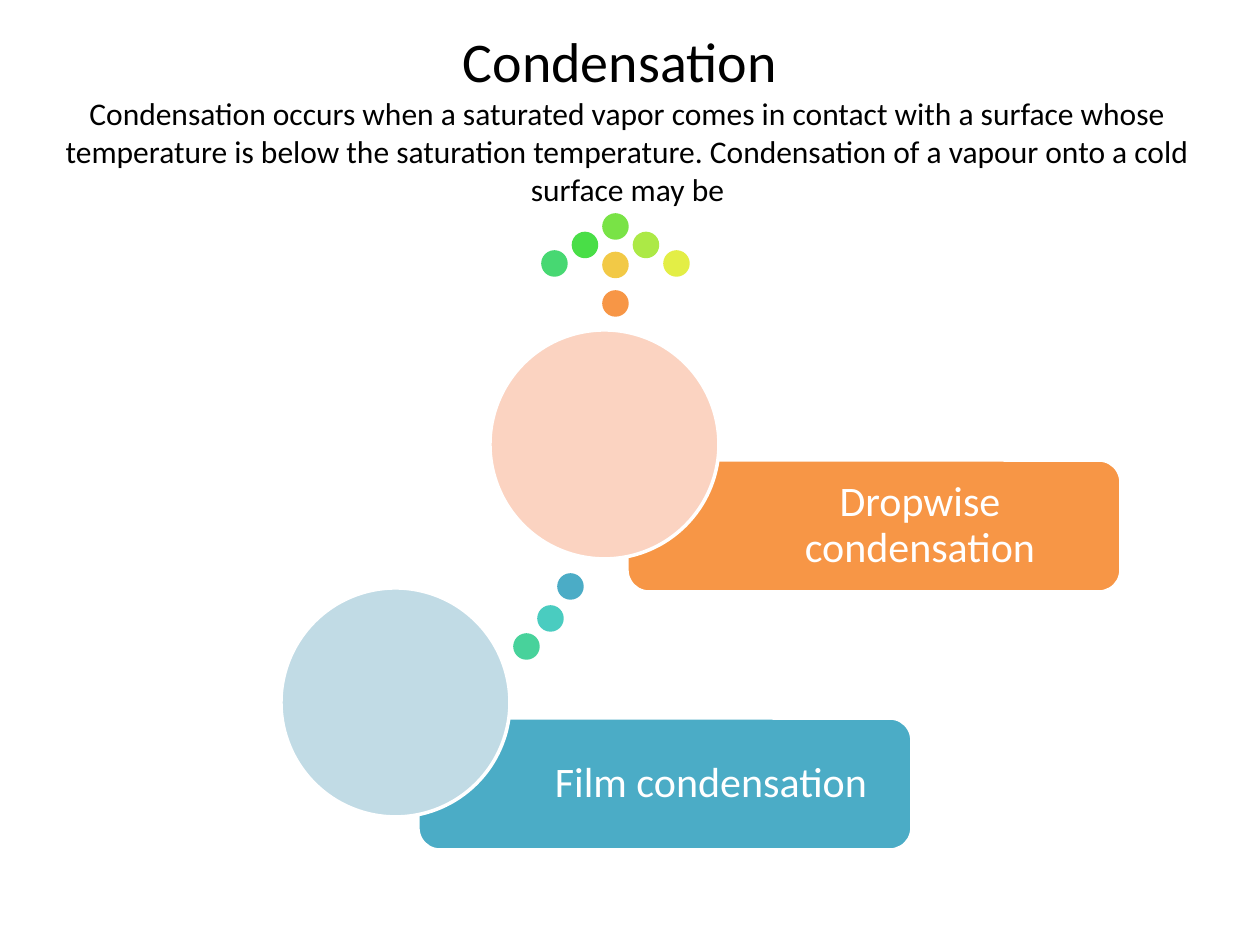
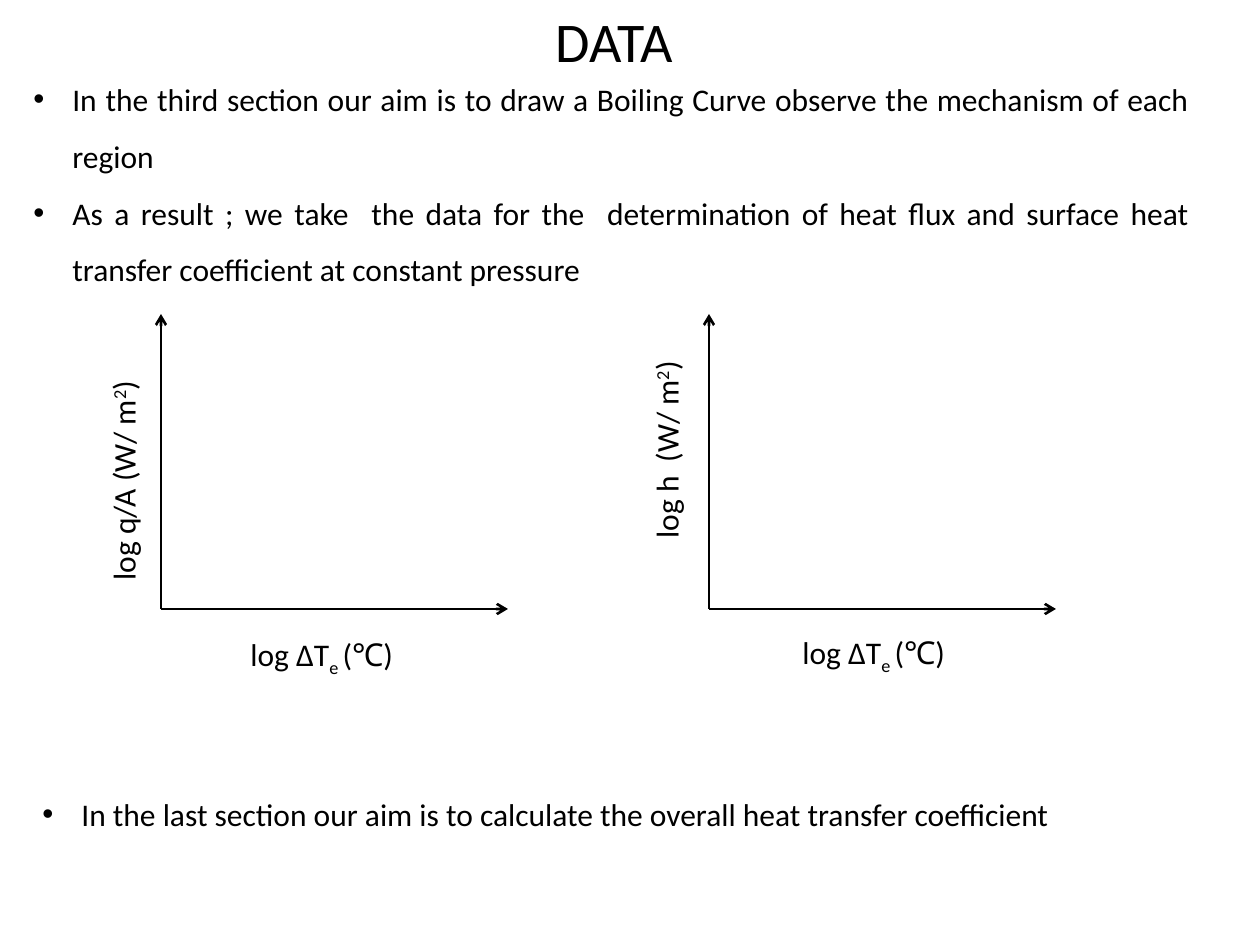
import pptx
import pptx.util
import pptx.dml.color
import pptx.enum.shapes
import pptx.enum.text
import pptx.oxml.ns
import lxml.etree
from dataclasses import dataclass

Pt = pptx.util.Pt
ALIGN = pptx.enum.text.PP_ALIGN
ANCHOR = pptx.enum.text.MSO_ANCHOR
SHAPE = pptx.enum.shapes.MSO_SHAPE
qn = pptx.oxml.ns.qn


@dataclass(frozen=True)
class Theme:
    font: str = "Calibri"
    ink: str = "000000"
    paper: str = "FFFFFF"
    title_size: int = 32
    card_size: int = 24
    body_size: int = 18
    outline: float = 2
    axis: float = 1.5


THEME = Theme()
PX = 914400 / 126

# Content: condensation slide
CONDENSATION = {
    "title": ("Condensation", (20, 20, 1200, 80)),
    "body": (
        "Condensation occurs when a saturated vapor comes in contact with a surface whose",
        "temperature is below the saturation temperature. Condensation of a vapour onto a cold",
        "surface may be",
    ),
    "body_box": (15, 88, 1225, 128),
}
# label, circle left and top, card colour, circle colour
CARDS = [
    ("Film condensation", (281, 588), "4BACC6", "C1DBE5"),
    ("Dropwise condensation", (490, 330), "F79646", "FBD3C1"),
]
CIRCLE = 229
CARD_OFFSET, CARD_SIZE = (137, 130), (494, 132)

# Dots: a trail between the circles and an arrow above the upper one
DOT = 23
TRAIL_DOTS = [(559, 575, "4BACC6"), (539, 607, "4ACCC0"), (515, 635, "48D29B")]
ARROW_TIP = (604, 215)
ARROW_HEAD = ["47D872", "49DE47", "79E346", "ACE946", "E3EE46"]
ARROW_STEM = ["F2C946", "F79646"]

# Content: data slide
DATA_TITLE = ("DATA", (302, 0, 625, 81))
BULLETS = [
    ((21, 55, 1181, 299), [
        "In the third section our aim is to draw a Boiling Curve observe "
        "the mechanism of each region",
        "As a result ; we take  the data for the  determination of heat flux "
        "and surface heat transfer coefficient at constant pressure",
    ]),
    ((30, 770, 1181, 71), [
        "In the last section our aim is to calculate the overall heat transfer coefficient",
    ]),
]
# Axis labels are (text, baseline shift in thousandths of a percent)
X_LABEL = [("log ΔT", 0), ("e ", -25000), ("(℃)", 0)]
AXES = [
    {"origin": (161, 609), "y_name": "log q/A (W/ m", "y_at": (4, 449), "x_at": (238, 629)},
    {"origin": (709, 609), "y_name": "log h  (W/ m", "y_at": (547, 407), "x_at": (790, 627)},
]
AXIS_WIDTH, AXIS_HEIGHT = 347, 295


def px(*values):
    return [pptx.util.Emu(round(v * PX)) for v in values]


def rgb(value):
    return pptx.dml.color.RGBColor.from_string(value)


def style(p, size, color=THEME.ink, align=None, spacing=None):
    p.alignment = align
    p.line_spacing = spacing
    for r in p.runs:
        r.font.name = THEME.font
        r.font.size = Pt(size)
        r.font.color.rgb = rgb(color)


def add_slide(prs, title, box):
    s = prs.slides.add_slide(prs.slide_layouts[5])
    sp = s.shapes.title
    sp.left, sp.top, sp.width, sp.height = px(*box)
    tf = sp.text_frame
    tf.text = title
    tf.auto_size = pptx.enum.text.MSO_AUTO_SIZE.NONE
    tf.vertical_anchor = ANCHOR.MIDDLE
    style(tf.paragraphs[0], THEME.title_size, align=ALIGN.CENTER)
    return s


def add_text(s, box, lines, align=None, spacing=None, wrap=True):
    sp = s.shapes.add_textbox(*px(*box))
    tf = sp.text_frame
    tf.word_wrap = wrap
    tf.text = "\n".join(lines)
    for p in tf.paragraphs:
        style(p, THEME.body_size, align=align, spacing=spacing)
    return sp


def add_bullets(s, box, lines):
    sp = add_text(s, box, lines, ALIGN.JUSTIFY, 1.5)
    indent = px(39)[0]
    for p in sp.text_frame.paragraphs:
        pr = p._p.get_or_add_pPr()
        pr.set("marL", str(indent))
        pr.set("indent", str(-indent))
        lxml.etree.SubElement(pr, qn("a:buFont")).set("typeface", "Arial")
        lxml.etree.SubElement(pr, qn("a:buChar")).set("char", "•")


def add_label(s, box, parts, rotation=0, wrap=True):
    sp = add_text(s, box, [""], wrap=wrap)
    sp.rotation = rotation
    p = sp.text_frame.paragraphs[0]
    for text, shift in parts:
        r = p.add_run()
        r.text = text
        if shift:
            r.font._element.set("baseline", str(shift))
    style(p, THEME.body_size)


def add_shape(s, kind, box, fill, line):
    sp = s.shapes.add_shape(kind, *px(*box))
    sp.shadow.inherit = False
    sp.fill.solid()
    sp.fill.fore_color.rgb = rgb(fill)
    sp.line.color.rgb = rgb(line)
    sp.line.width = Pt(THEME.outline)
    return sp


def add_card(s, label, corner, fill, tint):
    x, y = corner
    dx, dy = CARD_OFFSET
    sp = add_shape(s, SHAPE.ROUNDED_RECTANGLE, (x + dx, y + dy, *CARD_SIZE), fill, THEME.paper)
    tf = sp.text_frame
    tf.word_wrap = True
    tf.vertical_anchor = ANCHOR.MIDDLE
    tf.margin_left, tf.margin_right = px(111, 19)
    tf.text = label
    style(tf.paragraphs[0], THEME.card_size, THEME.paper, ALIGN.CENTER, 0.9)
    add_shape(s, SHAPE.OVAL, (x, y, CIRCLE, CIRCLE), tint, THEME.paper)


def add_axis(s, start, end):
    c = s.shapes.add_connector(pptx.enum.shapes.MSO_CONNECTOR.STRAIGHT, *px(*start, *end))
    c.line.color.rgb = rgb(THEME.ink)
    c.line.width = Pt(THEME.axis)
    lxml.etree.SubElement(c.line._get_or_add_ln(), qn("a:tailEnd")).set("type", "arrow")
    lxml.etree.SubElement(c._element.spPr, qn("a:effectLst"))


def build_condensation(prs):
    s = add_slide(prs, *CONDENSATION["title"])
    add_text(s, CONDENSATION["body_box"], CONDENSATION["body"], ALIGN.CENTER)

    # Arrow head spreads evenly from the tip, the stem drops below it
    x, y = ARROW_TIP
    middle = len(ARROW_HEAD) // 2
    head = [(x + 30.5 * (i - middle), y + 18.5 * abs(i - middle), color)
            for i, color in enumerate(ARROW_HEAD)]
    stem = [(x, y + 38.5 * i, color) for i, color in enumerate(ARROW_STEM, 1)]
    for left, top, color in TRAIL_DOTS + head + stem:
        add_shape(s, SHAPE.OVAL, (left, top, DOT, DOT), color, color)

    for card in CARDS:
        add_card(s, *card)


def build_data(prs):
    s = add_slide(prs, *DATA_TITLE)
    for box, lines in BULLETS:
        add_bullets(s, box, lines)

    # Empty plots with labelled axes
    for plot in AXES:
        x, y = plot["origin"]
        add_axis(s, (x, y), (x, y - AXIS_HEIGHT))
        add_axis(s, (x, y), (x + AXIS_WIDTH, y))
        y_label = [(plot["y_name"], 0), ("2", 30000), (")", 0)]
        add_label(s, (*plot["y_at"], 238, 50), y_label, rotation=270)
        add_label(s, (*plot["x_at"], 181, 50), X_LABEL, wrap=False)


def main():
    prs = pptx.Presentation()
    prs.slide_width, prs.slide_height = px(1260, 945)
    build_condensation(prs)
    build_data(prs)
    prs.save("out.pptx")


if __name__ == "__main__":
    main()
